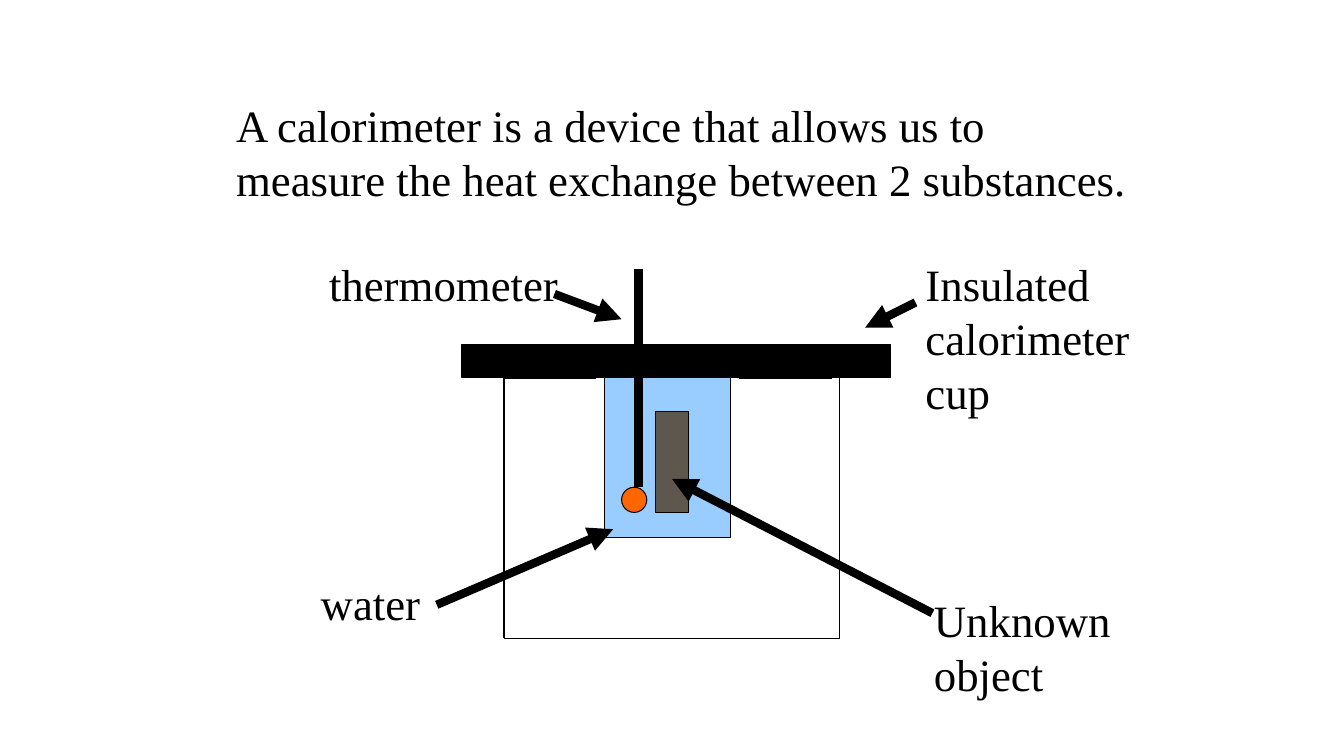
from lxml import etree
from pptx import Presentation
from pptx.dml.color import RGBColor
from pptx.enum.shapes import MSO_CONNECTOR, MSO_SHAPE
from pptx.enum.text import MSO_ANCHOR, MSO_AUTO_SIZE, PP_ALIGN
from pptx.oxml.ns import qn
from pptx.util import Inches, Pt

RECTANGLE, OVAL = MSO_SHAPE.RECTANGLE, MSO_SHAPE.OVAL
STRAIGHT = MSO_CONNECTOR.STRAIGHT
LEFT, TOP = PP_ALIGN.LEFT, MSO_ANCHOR.TOP
FIT_SHAPE = MSO_AUTO_SIZE.SHAPE_TO_FIT_TEXT

COLORS = {"ink": "000000", "water": "99CCFF", "object": "5E574E", "bulb": "FF6600"}
FONT, TEXT_SIZE = "Times New Roman", 32
THIN, THICK = 0.75, 6
COLUMNS, ROWS = 160, 90
UNIT = Inches(1) / 12

STATEMENT = ("A calorimeter is a device that allows us to measure "
             "the heat exchange between 2 substances.")
STATEMENT_AREA = (26.9, 11, 109, 14)

CUP_WALLS = [
    (60, 45, 60, 76),
    (60, 76, 100, 76),
    (100, 76, 100, 45),
    (60, 45, 71, 45),
    (88, 45, 99, 45),
]
WATER = (RECTANGLE, "water", (72, 45, 15, 19))
UNKNOWN_OBJECT = (RECTANGLE, "object", (78, 49, 4, 12))
THERMOMETER = (76, 58, 76, 32)
BULB = (OVAL, "bulb", (74, 58, 3, 3))
LID = (RECTANGLE, "ink", (55, 41, 51, 4))

LABELS = [
    (["thermometer"], (38, 30, 30, 7.5), (66, 35, 74, 38)),
    (["Unknown", "object"], (110, 70, 25, 14), (111, 73, 80, 57)),
    (["water"], (37, 68, 15, 7.5), (52, 72, 73, 63)),
    (["Insulated calorimeter cup"], (109, 30, 31, 20.6), (109, 36, 103, 39)),
]


def on_grid(cells):
    return [round(cell * UNIT) for cell in cells]


def color(name):
    return RGBColor.from_string(COLORS[name])


def write(box, lines):
    frame = box.text_frame
    frame.text = "\n".join(lines)
    frame.word_wrap = True
    frame.auto_size = FIT_SHAPE
    frame.vertical_anchor = TOP
    for para in frame.paragraphs:
        para.alignment = LEFT
        para.font.name = FONT
        para.font.size = Pt(TEXT_SIZE)
        para.font.color.rgb = color("ink")


def draw_line(page, ends, width, arrow=False):
    line = page.shapes.add_connector(STRAIGHT, *on_grid(ends))
    line.line.color.rgb = color("ink")
    line.line.width = Pt(width)
    if arrow:
        outline = line._element.spPr.find(qn("a:ln"))
        etree.SubElement(outline, qn("a:tailEnd"), type="triangle")
    etree.SubElement(line._element.spPr, qn("a:effectLst"))


def draw_part(page, kind, fill, area):
    part = page.shapes.add_shape(kind, *on_grid(area))
    part.shadow.inherit = False
    part.fill.solid()
    part.fill.fore_color.rgb = color(fill)
    part.line.color.rgb = color("ink")
    part.line.width = Pt(THIN)


def main():
    deck = Presentation()
    deck.slide_width, deck.slide_height = on_grid((COLUMNS, ROWS))
    page = deck.slides.add_slide(deck.slide_layouts[5])

    title = page.shapes.title
    title.left, title.top, title.width, title.height = on_grid(STATEMENT_AREA)
    write(title, [STATEMENT])

    for wall in CUP_WALLS:
        draw_line(page, wall, THIN)
    draw_part(page, *WATER)
    draw_part(page, *UNKNOWN_OBJECT)
    draw_line(page, THERMOMETER, THICK)
    draw_part(page, *BULB)
    draw_part(page, *LID)

    for lines, area, arrow in LABELS:
        write(page.shapes.add_textbox(*on_grid(area)), lines)
        draw_line(page, arrow, THICK, arrow=True)

    deck.save("out.pptx")


if __name__ == "__main__":
    main()
